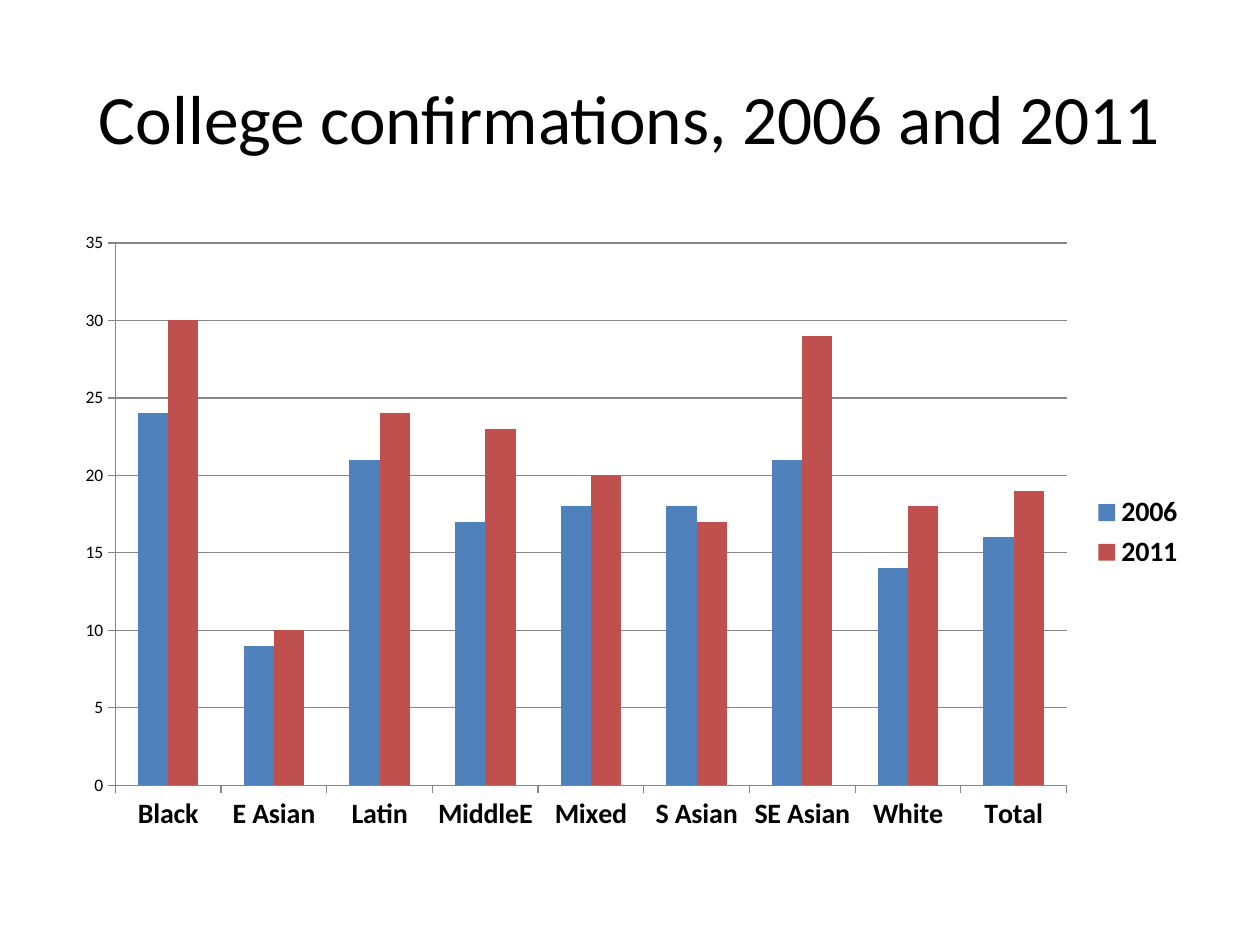
import pptx
import pptx.chart.data
import pptx.dml.color
import pptx.enum.chart
import pptx.enum.text
import pptx.util
from pptx.util import Cm

BLACK = pptx.dml.color.RGBColor(0x00, 0x00, 0x00)
GRAY = pptx.dml.color.RGBColor(0x86, 0x86, 0x86)
BLUE = pptx.dml.color.RGBColor(0x4F, 0x81, 0xBD)
RED = pptx.dml.color.RGBColor(0xC0, 0x50, 0x4D)
FONT = "Calibri"


def set_font(font, size, bold=False):
    font.name = FONT
    font.size = pptx.util.Pt(size)
    font.bold = bold
    font.color.rgb = BLACK


prs = pptx.Presentation()
prs.slide_width, prs.slide_height = Cm(25.4), Cm(19.05)
s = prs.slides.add_slide(prs.slide_layouts[6])

# Title
sp = s.shapes.add_textbox(Cm(1.27), Cm(0.76), Cm(22.86), Cm(3.18))
tf = sp.text_frame
tf.word_wrap = True
tf.vertical_anchor = pptx.enum.text.MSO_ANCHOR.MIDDLE
p = tf.paragraphs[0]
p.text = "College confirmations, 2006 and 2011"
p.alignment = pptx.enum.text.PP_ALIGN.CENTER
set_font(p.runs[0].font, 39.6)

# Chart data
data = pptx.chart.data.CategoryChartData()
data.categories = ["Black", "E Asian", "Latin", "MiddleE", "Mixed",
                   "S Asian", "SE Asian", "White", "Total"]
data.add_series("2006", [24, 9, 21, 17, 18, 18, 21, 14, 16])
data.add_series("2011", [30, 10, 24, 23, 20, 17, 29, 18, 19])

# Clustered columns
chart = s.shapes.add_chart(
    pptx.enum.chart.XL_CHART_TYPE.COLUMN_CLUSTERED,
    Cm(1.27), Cm(4.45), Cm(22.86), Cm(12.57), data).chart
chart.has_title = False
set_font(chart.font, 10)
plot = chart.plots[0]
plot.gap_width = 150
plot.overlap = 0
plot.vary_by_categories = False
for series, color in zip(plot.series, (BLUE, RED)):
    series.format.fill.solid()
    series.format.fill.fore_color.rgb = color
    series.invert_if_negative = False

# Axes
cat_axis, val_axis = chart.category_axis, chart.value_axis
val_axis.minimum_scale, val_axis.maximum_scale = 0, 35
val_axis.major_unit = 5
val_axis.has_major_gridlines = True
for axis, size, bold in ((cat_axis, 16, True), (val_axis, 10, False)):
    axis.major_tick_mark = pptx.enum.chart.XL_TICK_MARK.OUTSIDE
    set_font(axis.tick_labels.font, size, bold)
for line in (cat_axis.format.line, val_axis.format.line,
             val_axis.major_gridlines.format.line):
    line.color.rgb = GRAY
    line.width = pptx.util.Pt(0.75)

# Legend
chart.has_legend = True
chart.legend.position = pptx.enum.chart.XL_LEGEND_POSITION.RIGHT
chart.legend.include_in_layout = False
set_font(chart.legend.font, 16, True)

prs.save("out.pptx")
